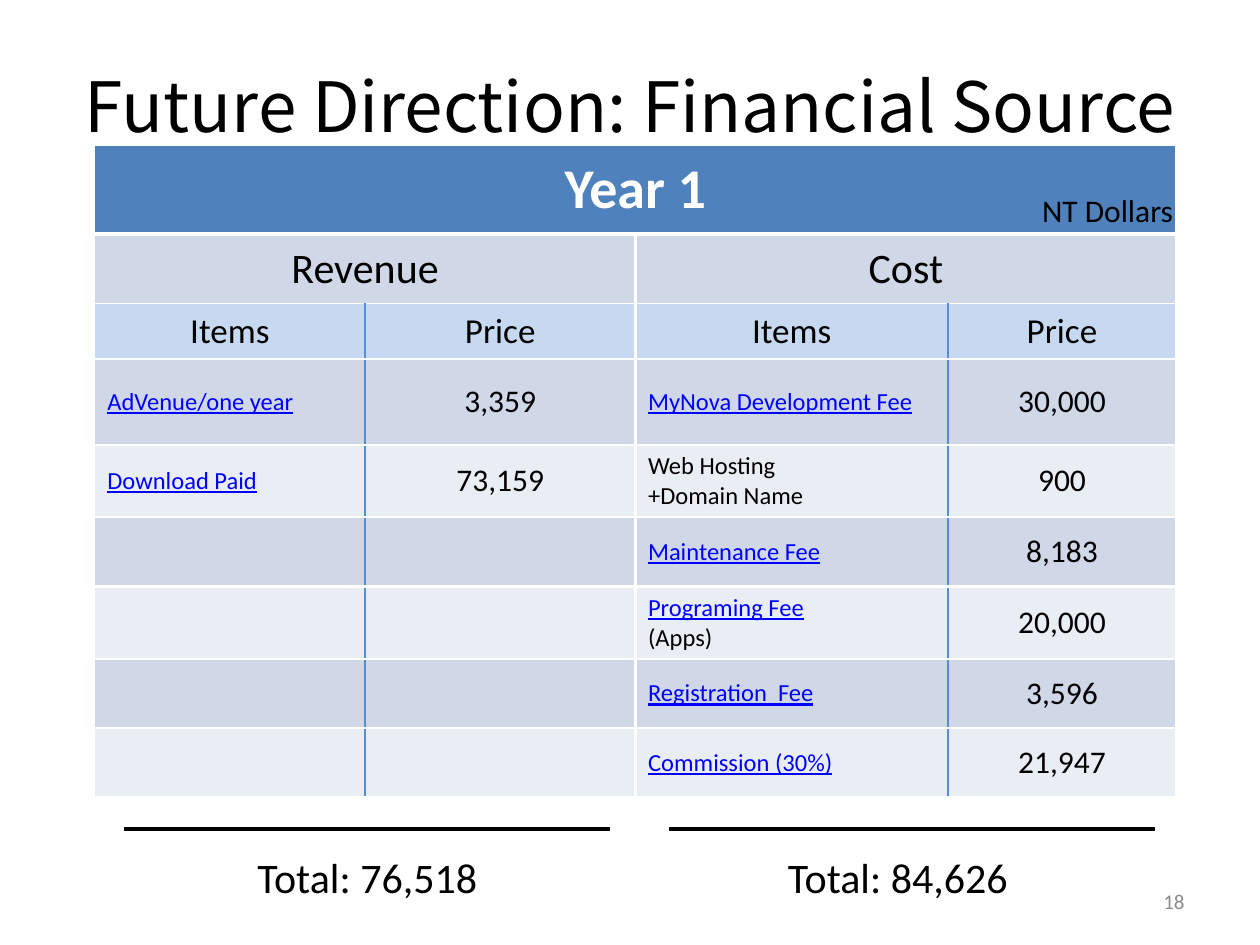
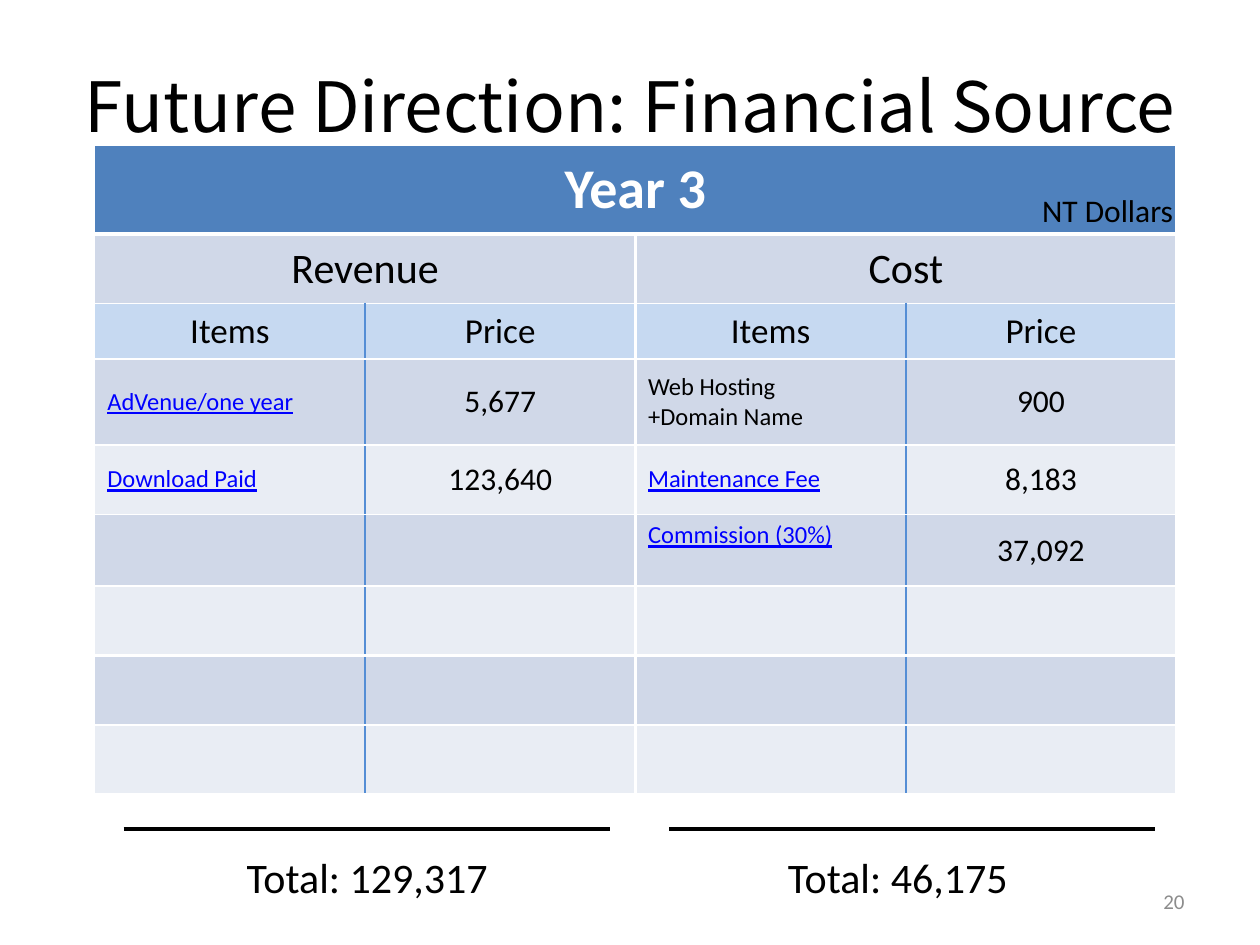
from pptx import Presentation
from pptx.util import Cm, Pt
from pptx.dml.color import RGBColor
from pptx.enum import shapes, text
from pptx.oxml import parse_xml
from pptx.oxml import ns
from lxml import etree

HUES = {
    "ink": "000000", "white": "FFFFFF", "head": "4F81BD", "sub": "C6D9F1",
    "dark": "D0D8E8", "light": "E9EDF4", "rule": "558ED5", "link": "0000FF",
    "page": "8C8C8C",
}
FONT = "Calibri"
TITLE_FONT = "Noto Sans CJK SC"
LEFT, MID, RIGHT = text.PP_ALIGN.LEFT, text.PP_ALIGN.CENTER, text.PP_ALIGN.RIGHT
ROWS = [1.8, 1.4, 1.1, 1.73, 1.4, 1.4, 1.4, 1.4, 1.4, 2.18]
FIRST, LAST = 3, 9
PLAIN = {"Web Hosting", "+Domain Name", "(Apps)"}
HOST = ["Web Hosting", "+Domain Name"]

YEARS = [
    {
        "name": "Year 1", "page": "18", "cols": [5.45, 5.45, 6.3, 4.6],
        "gain": [(["AdVenue/one year"], "3,359"), (["Download Paid"], "73,159")],
        "cost": [
            (["MyNova Development Fee"], "30,000"),
            (HOST, "900"),
            (["Maintenance Fee"], "8,183"),
            (["Programing Fee", "(Apps)"], "20,000"),
            (["Registration  Fee"], "3,596"),
            (["Commission (30%)"], "21,947"),
        ],
        "sums": ["Total: 76,518", "Total: 84,626 "],
        "raised": None, "tall": {},
    },
    {
        "name": "Year 3", "page": "20", "cols": [5.45] * 4,
        "gain": [(["AdVenue/one year"], "5,677"), (["Download Paid"], "123,640")],
        "cost": [
            (HOST, "900"),
            (["Maintenance Fee"], "8,183"),
            (["Commission (30%)"], "37,092"),
        ],
        "sums": ["Total: 129,317", "Total: 46,175 "],
        "raised": (5, 2), "tall": {5: 1.45},
    },
]


def hue(name):
    return RGBColor.from_string(HUES[name])


def write(frame, lines, size, align=MID, color="ink", bold=False, font=FONT):
    for i, line in enumerate(lines):
        para = frame.paragraphs[0] if i == 0 else frame.add_paragraph()
        para.alignment = align
        run = para.add_run()
        run.text = line
        run.font.name = font
        run.font.size = Pt(size)
        run.font.bold = bold
        run.font.color.rgb = hue(color)


def label(slide, box, line, size, align, color="ink", anchor=text.MSO_ANCHOR.TOP):
    frame = slide.shapes.add_textbox(*map(Cm, box)).text_frame
    frame.word_wrap = True
    frame.vertical_anchor = anchor
    write(frame, [line], size, align, color)


def add_title(slide, box, line):
    title = slide.shapes.title
    title.left, title.top, title.width, title.height = map(Cm, box)
    title.text_frame.vertical_anchor = text.MSO_ANCHOR.MIDDLE
    write(title.text_frame, [line], 39.6, font=TITLE_FONT)


def upright(row, edge):
    if FIRST - 1 <= row < LAST:
        if edge % 2:
            return "rule", 1
        return "white", 1.5 if edge == 2 else 1
    return "white", 2.25 if row == 1 and edge == 2 else 1


def level(edge):
    return "white", 3 if edge == 1 else 1.5 if 6 <= edge <= LAST else 1


def border(cell, row, col):
    sides = {"L": upright(row, col), "R": upright(row, col + 1),
             "T": level(row), "B": level(row + 1)}
    props = cell._tc.get_or_add_tcPr()
    for side, (color, width) in sides.items():
        props.append(parse_xml(
            f'<a:ln{side} {ns.nsdecls("a")} w="{Pt(width)}"><a:solidFill>'
            f'<a:srgbClr val="{HUES[color]}"/></a:solidFill></a:ln{side}>'))


def shade(row):
    if row in (0, 2, LAST):
        return {0: "head", 2: "sub", LAST: "white"}[row]
    return "dark" if row % 2 else "light"


def fill_item(cell, lines):
    write(cell.text_frame, lines, 14, LEFT)
    for para in cell.text_frame.paragraphs:
        for run in para.runs:
            if run.text not in PLAIN:
                run.font.underline = True
                run.font.color.rgb = hue("link")


def add_grid(slide, box, year):
    grid = slide.shapes.add_table(len(ROWS), 4, *map(Cm, box)).table
    for col, width in zip(grid.columns, year["cols"]):
        col.width = Cm(width)
    for r, height in enumerate(ROWS):
        grid.rows[r].height = Cm(year["tall"].get(r, height))
        for c in range(4):
            cell = grid.cell(r, c)
            border(cell, r, c)
            cell.fill.solid()
            cell.fill.fore_color.rgb = hue(shade(r))
            cell.vertical_anchor = text.MSO_ANCHOR.MIDDLE
    grid.cell(0, 0).merge(grid.cell(0, 3))
    write(grid.cell(0, 0).text_frame, [year["name"]], 32, color="white", bold=True)
    for c, head, key in ((0, "Revenue", "gain"), (2, "Cost", "cost")):
        grid.cell(1, c).merge(grid.cell(1, c + 1))
        write(grid.cell(1, c).text_frame, [head], 24)
        for i, name in enumerate(("Items", "Price")):
            write(grid.cell(2, c + i).text_frame, [name], 20)
        for r, (lines, price) in enumerate(year[key], FIRST):
            fill_item(grid.cell(r, c), lines)
            write(grid.cell(r, c + 1).text_frame, [price], 18)
    if year["raised"]:
        grid.cell(*year["raised"]).vertical_anchor = text.MSO_ANCHOR.TOP


def add_sums(slide, box, sums):
    x, y, width, height = box
    span = 9.8
    for line, start, inset in zip(sums, (x, x + width - span), (1.32, 1.11)):
        rule = slide.shapes.add_connector(
            shapes.MSO_CONNECTOR.STRAIGHT, Cm(start), Cm(y), Cm(start + span), Cm(y))
        rule.line.color.rgb = hue("ink")
        rule.line.width = Pt(2)
        etree.SubElement(rule._element.spPr, ns.qn("a:effectLst"))
        label(slide, (start + inset, y + 0.33, 7.19, height - 0.33), line, 24, MID)


def add_year(deck, year):
    slide = deck.slides.add_slide(deck.slide_layouts[5])
    add_title(slide, (1.27, 0.53, 22.86, 3.18), "Future Direction: Financial Source")
    add_grid(slide, (1.91, 2.92, 21.8, 15.2), year)
    label(slide, (19.1, 3.73, 4.8, 1.02), "NT Dollars", 18, RIGHT)
    add_sums(slide, (2.49, 16.71, 20.8, 1.6), year["sums"])
    label(slide, (18.2, 17.65, 5.93, 1.02), year["page"], 12, RIGHT, "page",
          text.MSO_ANCHOR.MIDDLE)


def main():
    deck = Presentation()
    deck.slide_width, deck.slide_height = Cm(25.4), Cm(19.05)
    for year in YEARS:
        add_year(deck, year)
    deck.save("out.pptx")


if __name__ == "__main__":
    main()
